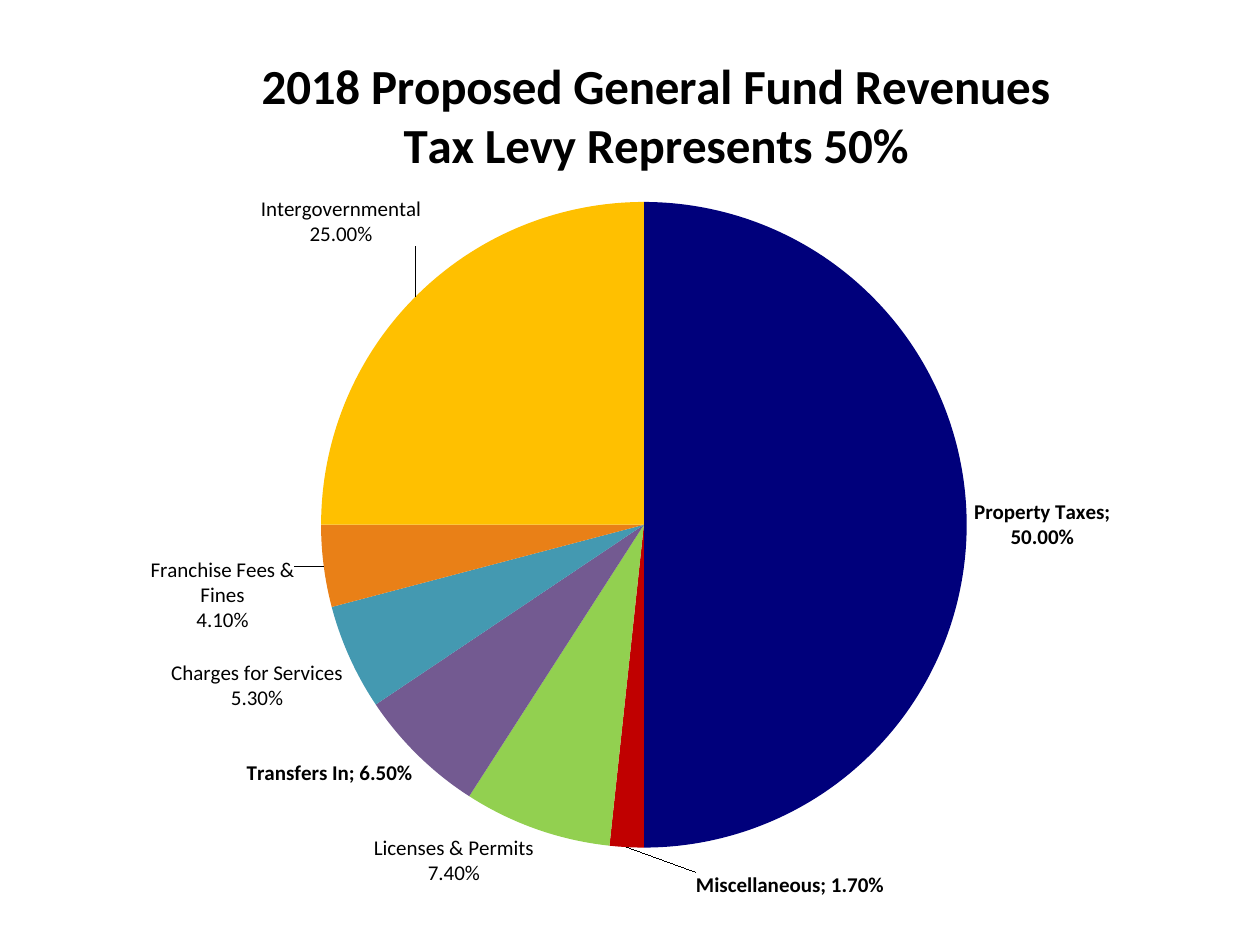
from pptx import Presentation
from pptx.chart.data import CategoryChartData
from pptx.dml.color import RGBColor
from pptx.enum import chart as ch
from pptx.oxml import parse_xml
from pptx.oxml.ns import nsdecls, qn
from pptx.util import Pt

TITLE = "2018 Proposed General Fund Revenues\nTax Levy Represents 50%"
# name, share, colour, label on two plain lines, label shift (fractions of the chart)
REVENUES = [
    ("Property Taxes", 0.5, "00007B", False, None),
    ("Miscellaneous", 0.017, "C00000", False, (0.15, 0.02)),
    ("Licenses & Permits", 0.074, "92D050", True, None),
    ("Transfers In", 0.065, "735A91", False, None),
    ("Charges for Services", 0.053, "4499B1", True, None),
    ("Franchise Fees & Fines", 0.041, "E98017", True, (-0.02, -0.01)),
    ("Intergovernmental", 0.25, "FFC000", True, (0.01, -0.05)),
]
CHART_BOX = (60, 12, 624, 510)
PIE_LEFT, PIE_TOP, PIE_SIZE = 183.5, 115.5, 369
TITLE_AT = (0.14, 0.035)
PERCENT = "0.00%"


def color(value):
    return RGBColor.from_string(value)


def set_layout(parent, index, **values):
    """Put a manual chart layout into parent at the child index."""
    for old in parent.findall(qn("c:layout")):
        parent.remove(old)
    items = "".join(f'<c:{tag} val="{value:.4f}"/>' if not isinstance(value, str)
                    else f'<c:{tag} val="{value}"/>' for tag, value in values.items())
    parent.insert(index, parse_xml(
        f'<c:layout {nsdecls("c")}><c:manualLayout>{items}</c:manualLayout></c:layout>'))


def style(font, size, bold):
    font.name, font.size, font.bold = "Calibri", Pt(size), bold
    font.color.rgb = color("000000")


def add_title(chart):
    chart.has_title = True
    frame = chart.chart_title.text_frame
    frame.text = TITLE
    for paragraph in frame.paragraphs:
        style(paragraph.font, 28, True)
        for run in paragraph.runs:
            style(run.font, 28, True)
    x, y = TITLE_AT
    set_layout(chart.chart_title._element, 1, xMode="edge", yMode="edge", x=x, y=y)


def label_slice(series, index, name, share, two_lines, shift):
    label = series.points[index].data_label
    if two_lines:
        label.text_frame.text = f"{name}\n{share:.2%}"
        for paragraph in label.text_frame.paragraphs:
            for run in paragraph.runs:
                style(run.font, 12, False)
    else:
        style(label.font, 12, True)
    label.position = ch.XL_LABEL_POSITION.OUTSIDE_END
    element = series._element.xpath(f"c:dLbls/c:dLbl[c:idx/@val='{index}']")[0]
    element.find(qn("c:showCatName")).set("val", "1")
    if not two_lines:
        element.insert(1, parse_xml(
            f'<c:numFmt {nsdecls("c")} formatCode="{PERCENT}" sourceLinked="0"/>'))
    if shift:
        set_layout(element, 1, x=shift[0], y=shift[1])


def main():
    prs = Presentation()
    prs.slide_width, prs.slide_height = Pt(720), Pt(540)
    slide = prs.slides.add_slide(prs.slide_layouts[6])

    data = CategoryChartData(number_format=PERCENT)
    data.categories = [row[0] for row in REVENUES]
    data.add_series("Series 1", [row[1] for row in REVENUES])
    chart = slide.shapes.add_chart(
        ch.XL_CHART_TYPE.PIE, *map(Pt, CHART_BOX), data).chart
    chart.has_legend = False
    style(chart.font, 10, False)
    add_title(chart)

    left, top, width, height = CHART_BOX
    set_layout(chart._chartSpace.chart.plotArea, 0,
               layoutTarget="inner", xMode="edge", yMode="edge",
               x=(PIE_LEFT - left) / width, y=(PIE_TOP - top) / height,
               w=PIE_SIZE / width, h=PIE_SIZE / height)

    chart.plots[0].vary_by_categories = True
    series = chart.plots[0].series[0]
    labels = series.data_labels
    labels.show_value = labels.show_category_name = True
    labels.number_format, labels.number_format_is_linked = PERCENT, False
    labels.position = ch.XL_LABEL_POSITION.OUTSIDE_END
    style(labels.font, 12, True)

    for index, (name, share, fill, two_lines, shift) in enumerate(REVENUES):
        point = series.points[index].format
        point.fill.solid()
        point.fill.fore_color.rgb = color(fill)
        point.line.fill.background()
        label_slice(series, index, name, share, two_lines, shift)

    prs.save("out.pptx")


if __name__ == "__main__":
    main()
